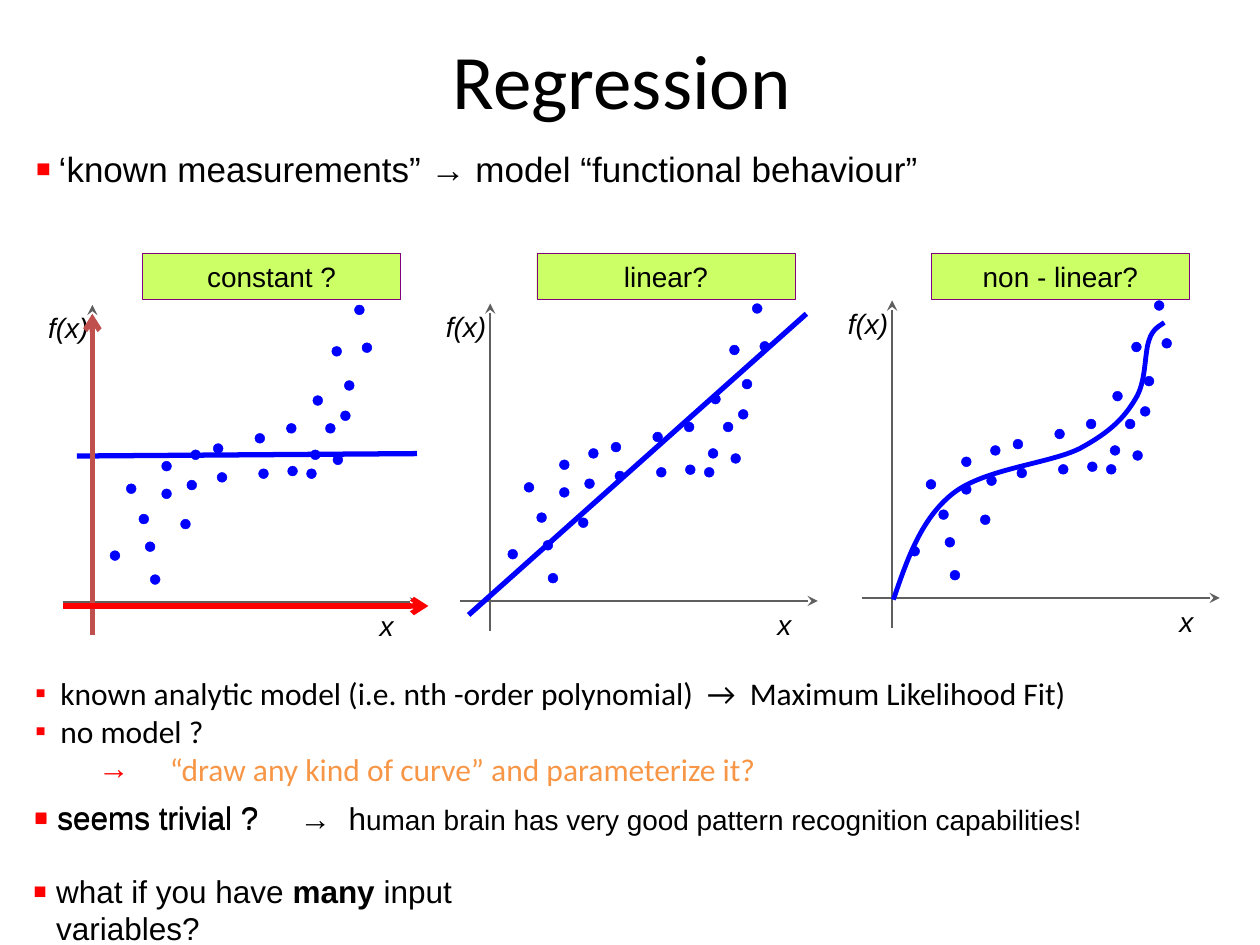
"""Build the Regression slide with three scatter panels and their fits."""
import lxml.etree
import pptx
import pptx.dml.color
import pptx.enum.shapes
import pptx.enum.text
import pptx.oxml.ns
import pptx.util

Pt = pptx.util.Pt
qn = pptx.oxml.ns.qn
color = pptx.dml.color.RGBColor.from_string
BLUE, RED, GREY, BLACK = "0000FF", "FF0000", "5F5F5F", "000000"

presentation = pptx.Presentation()
presentation.slide_width, presentation.slide_height = Pt(720), Pt(540)
slide = presentation.slides.add_slide(presentation.slide_layouts[5])


def add_line(start, end, line_color, width, arrow=None):
    """Add a straight line with an optional arrowhead at its end."""
    connector = slide.shapes.add_connector(
        pptx.enum.shapes.MSO_CONNECTOR.STRAIGHT, *map(Pt, start + end))
    connector.line.color.rgb = color(line_color)
    connector.line.width = Pt(width)
    properties = connector._element.spPr
    if arrow:
        tail = lxml.etree.SubElement(properties.find(qn("a:ln")), qn("a:tailEnd"))
        tail.set("type", arrow)
    lxml.etree.SubElement(properties, qn("a:effectLst"))


def add_text(box, paragraphs, wrap=True):
    """Add a text box of (bullet, bullet size, margin, indent, tab, runs) paragraphs."""
    text_frame = slide.shapes.add_textbox(*map(Pt, box)).text_frame
    text_frame.word_wrap = wrap
    for index, (bullet, bullet_size, margin, indent, tab, runs) in enumerate(paragraphs):
        paragraph = text_frame.add_paragraph() if index else text_frame.paragraphs[0]
        properties = paragraph._p.get_or_add_pPr()
        if bullet:
            properties.set("marL", str(Pt(margin)))
            properties.set("indent", str(Pt(indent)))
            bullet_color = lxml.etree.SubElement(properties, qn("a:buClr"))
            lxml.etree.SubElement(bullet_color, qn("a:srgbClr")).set("val", RED)
            lxml.etree.SubElement(properties, qn("a:buSzPct")).set("val", str(bullet_size * 1000))
            lxml.etree.SubElement(properties, qn("a:buFont")).set("typeface", "Arial")
            lxml.etree.SubElement(properties, qn("a:buChar")).set("char", bullet)
        if tab:
            tabs = lxml.etree.SubElement(properties, qn("a:tabLst"))
            stop = lxml.etree.SubElement(tabs, qn("a:tab"))
            stop.set("pos", str(Pt(tab)))
            stop.set("algn", "l")
        for text, size, font, text_color, style in runs:
            run = paragraph.add_run()
            run.text = text
            run.font.name, run.font.size = font, Pt(size)
            run.font.color.rgb = color(text_color)
            run.font.bold, run.font.italic = style == "bold", style == "italic"


title = slide.shapes.title
title.left, title.top, title.width, title.height = Pt(31.5), Pt(0), Pt(648), Pt(90)
title.text_frame.text = "Regression"
title.text_frame.vertical_anchor = pptx.enum.text.MSO_ANCHOR.MIDDLE
title_paragraph = title.text_frame.paragraphs[0]
title_paragraph.alignment = pptx.enum.text.PP_ALIGN.CENTER
title_font = title_paragraph.runs[0].font
title_font.name, title_font.size = "Calibri", Pt(44)
title_font.color.rgb = color(BLACK)

measurements = [
    (95, 76.3), (144, 126.7), (122.4, 76.3), (92.9, 96.5), (136.8, 146.2),
    (133.2, 102.2), (111.6, 77.8), (126, 118.1), (137.5, 84.2), (141.8, 109.4),
    (69.1, 90.7), (154.1, 148.3), (110.9, 102.2), (149.8, 169.9), (124.6, 87.1),
    (71.3, 74.2), (50.4, 47.5), (19.4, 67.7), (39.6, 80.6), (54, 69.8),
    (39.6, 64.8), (56.2, 87.1), (30.2, 34.6), (10.1, 29.5), (33.1, 15.8),
    (26.6, 50.4)]
panels = [(52.8, 344.2, 81.4, "constant ?"), (280.1, 343.4, 306.7, "linear?"),
          (509.8, 341.7, 532.1, "non - linear?")]

for origin_x, origin_y, label_left, label in panels:
    add_line((origin_x - 17, origin_y), (origin_x + 187.2, origin_y), GREY, 1, "stealth")
    add_line((origin_x, origin_y + 17), (origin_x, origin_y - 170), GREY, 1, "stealth")
    for x, y in measurements:
        dot = slide.shapes.add_shape(pptx.enum.shapes.MSO_SHAPE.OVAL, Pt(origin_x + x),
                                     Pt(origin_y - y), Pt(5.6), Pt(5.6))
        dot.shadow.inherit = False
        dot.fill.solid()
        dot.fill.fore_color.rgb = dot.line.color.rgb = color(BLUE)
        dot.line.width = Pt(0.25)
    for name, left, top, width in [("x", 157, 0, 22.3), ("f(x)", -32.4, -170, 37.4)]:
        add_text((origin_x + left, origin_y + top, width, 26.6),
                 [(None, 0, 0, 0, None, [(name, 16, "Arial", BLACK, "italic")])], wrap=False)

    question = slide.shapes.add_shape(pptx.enum.shapes.MSO_SHAPE.RECTANGLE, Pt(label_left),
                                      Pt(144.6), Pt(147.6), Pt(26.6))
    question.shadow.inherit = False
    question.fill.solid()
    question.fill.fore_color.rgb = color("CCFF66")
    question.line.color.rgb = color("800080")
    question.line.width = Pt(0.25)
    question.text_frame.margin_left = question.text_frame.margin_right = 0
    question.text_frame.text = label
    paragraph = question.text_frame.paragraphs[0]
    paragraph.alignment = pptx.enum.text.PP_ALIGN.CENTER
    font = paragraph.runs[0].font
    font.name, font.size = "Arial", Pt(16)
    font.color.rgb = color(BLACK)

add_line((43.9, 260.6), (238.3, 259.2), BLUE, 3)
add_line((267.8, 351.4), (460.8, 179.3), BLUE, 3)

curve_points = [
    (510.5, 342.7), (518.4, 319.7), (526.3, 296.6), (544.3, 282.2), (562.3, 267.8),
    (599.8, 265), (617, 256.3), (634.3, 247), (642.2, 239), (648.7, 228.2),
    (655.2, 218.2), (653.8, 202.3), (656.6, 194.4), (658.8, 187.2), (663.8, 185.8),
    (665.3, 184.3)]
builder = slide.shapes.build_freeform(Pt(curve_points[0][0]), Pt(curve_points[0][1]))
builder.add_line_segments([(Pt(x), Pt(y)) for x, y in curve_points[1:]], close=False)
curve = builder.convert_to_shape()
curve.shadow.inherit = False
curve.fill.background()
curve.line.color.rgb = color(BLUE)
curve.line.width = Pt(2.75)
segments = list(curve._element.iter(qn("a:lnTo")))
for first in range(0, len(segments), 3):
    bezier = lxml.etree.Element(qn("a:cubicBezTo"))
    segments[first].addprevious(bezier)
    for segment in segments[first:first + 3]:
        bezier.append(segment.find(qn("a:pt")))
        segment.getparent().remove(segment)

add_line((52.8, 362.9), (52.8, 179.3), "C0504D", 3, "arrow")
add_line((36, 346.3), (244.8, 346.3), RED, 3, "arrow")

statements = [
    ((13, 80.6, 709, 31.7), None,
     [("‘known measurements” → model “functional behaviour”", 20, "Arial", BLACK, None)]),
    ((12.2, 452.2, 163.4, 28.8), None, [("seems trivial ?", 18, "Arial", BLACK, None)]),
    ((12.2, 452.9, 616.3, 29.5), 152,
     [("seems trivial ?\t→  h", 18, "Arial", BLACK, None),
      ("uman brain has very good pattern recognition capabilities!",
       16, "Arial", BLACK, None)]),
    ((11.5, 494.6, 336, 28.8), None,
     [("what if you have ", 18, "Arial", BLACK, None), ("many", 18, "Arial", BLACK, "bold"),
      (" input variables?", 18, "Arial", BLACK, None)])]
for box, tab, runs in statements:
    add_text(box, [("▪", 135, 13.5, -13.5, tab, runs)])

model_line = "known analytic model (i.e. nth -order polynomial)  →  Maximum Likelihood Fit)"
curve_line = "“draw any kind of curve” and parameterize it?"
add_text((13, 381.6, 700, 72.7), [
    ("▪", 100, 14.4, -14.4, None, [(model_line, 18, "Calibri", BLACK, None)]),
    ("▪", 100, 14.4, -14.4, None, [("no model ?", 18, "Calibri", BLACK, None)]),
    ("→", 100, 77, -41, None, [(curve_line, 18, "Calibri", "F79646", None)])])

presentation.save("out.pptx")
